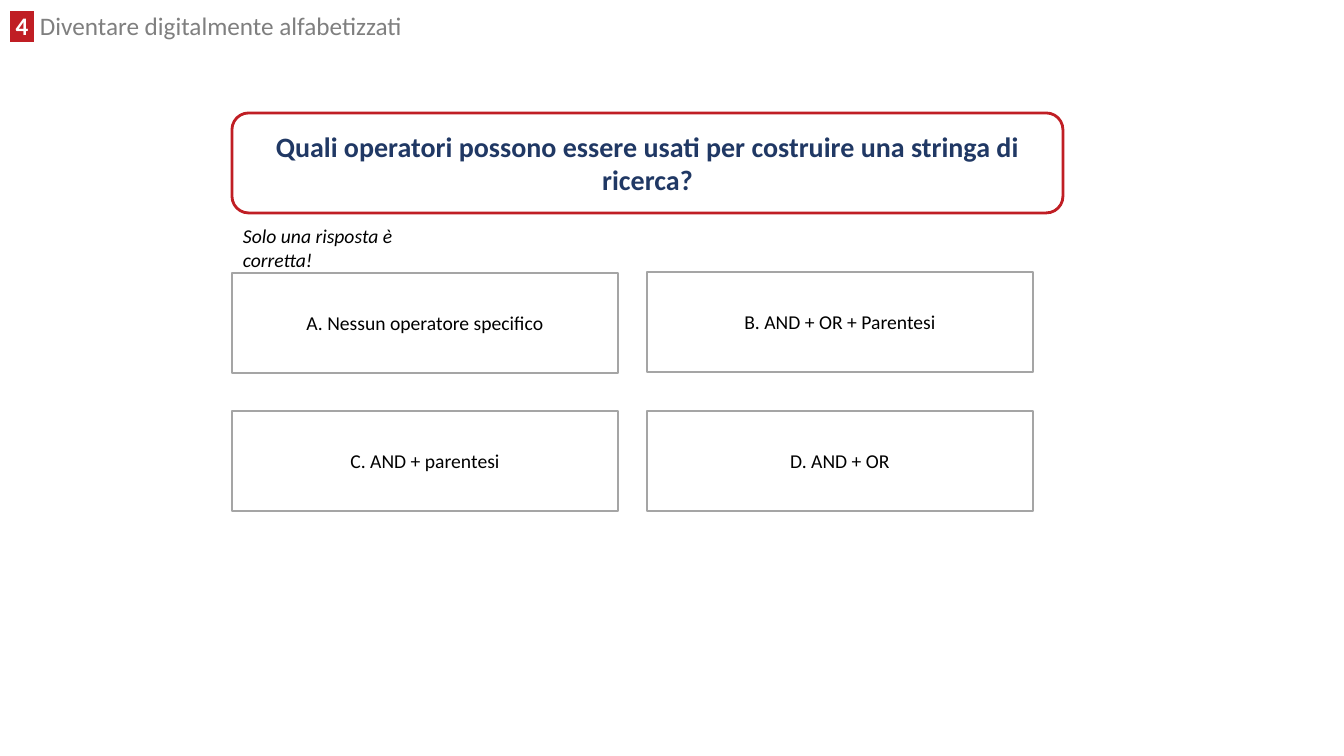
from pptx import Presentation
from pptx.dml.color import RGBColor
from pptx.enum.shapes import MSO_SHAPE as Shape
from pptx.enum.text import MSO_ANCHOR as Anchor, MSO_AUTO_SIZE as Auto, PP_ALIGN as Align
from pptx.oxml.ns import qn
from pptx.util import Pt
from lxml import etree

SCALE = 914400 / 100.8
RED, NAVY, GRAY, EDGE = "C01E24", "203864", "7F7F7F", "A5A5A5"
BLACK, WHITE = "000000", "FFFFFF"


def write(par, text, size=14, color=BLACK, bold=False, italic=False, mark=None):
    """Add a run to a paragraph; mark is its highlight colour."""
    run = par.add_run()
    run.text = text
    font = run.font
    font.size, font.bold, font.italic = Pt(size), bold, italic
    font.color.rgb = RGBColor.from_string(color)
    if mark:
        light = etree.SubElement(run._r.rPr, qn("a:highlight"))
        etree.SubElement(light, qn("a:srgbClr"), val=mark)
    font.name = "Calibri"


def box(kind, place, edge, text, **style):
    shape = slide.shapes.add_shape(kind, *[round(n * SCALE) for n in place])
    shape.shadow.inherit = False
    shape.fill.solid()
    shape.fill.fore_color.rgb = RGBColor.from_string(WHITE)
    shape.line.color.rgb = RGBColor.from_string(edge)
    shape.line.width = Pt(2)
    frame = shape.text_frame
    frame.word_wrap = True
    frame.vertical_anchor = Anchor.MIDDLE
    par = frame.paragraphs[0]
    par.alignment = Align.CENTER
    write(par, text, **style)


deck = Presentation()
deck.slide_width, deck.slide_height = round(1344 * SCALE), round(756 * SCALE)
slide = deck.slides.add_slide(deck.slide_layouts[5])

# Header
title = slide.shapes.title
title.left, title.top, title.width, title.height = [
    round(n * SCALE) for n in (0, 11, 960, 34)]
frame = title.text_frame
frame.word_wrap = True
frame.auto_size = Auto.NONE
frame.vertical_anchor = Anchor.TOP
par = frame.paragraphs[0]
par.alignment = Align.LEFT
par.line_spacing = 0.8
write(par, " 4 ", size=18, color=WHITE, bold=True, mark=RED)
write(par, " Diventare digitalmente alfabetizzati", size=18, color=GRAY)

# Question
box(Shape.ROUNDED_RECTANGLE, (232, 113, 831, 100), RED,
    "Quali operatori possono essere usati per costruire una stringa di ricerca?",
    size=20, color=NAVY, bold=True)

# Answers
answers = [
    ("A. Nessun operatore specifico", 232, 273),
    ("B. AND + OR + Parentesi", 647, 272),
    ("C. AND + parentesi", 232, 411),
    ("D. AND + OR", 647, 411),
]
for text, left, top in answers:
    box(Shape.RECTANGLE, (left, top, 386, 100), EDGE, text)

# Hint
hint = slide.shapes.add_textbox(*[round(n * SCALE) for n in (233, 219, 238, 34)])
hint.text_frame.word_wrap = True
write(hint.text_frame.paragraphs[0], "Solo una risposta è corretta!", italic=True)

deck.save("out.pptx")
